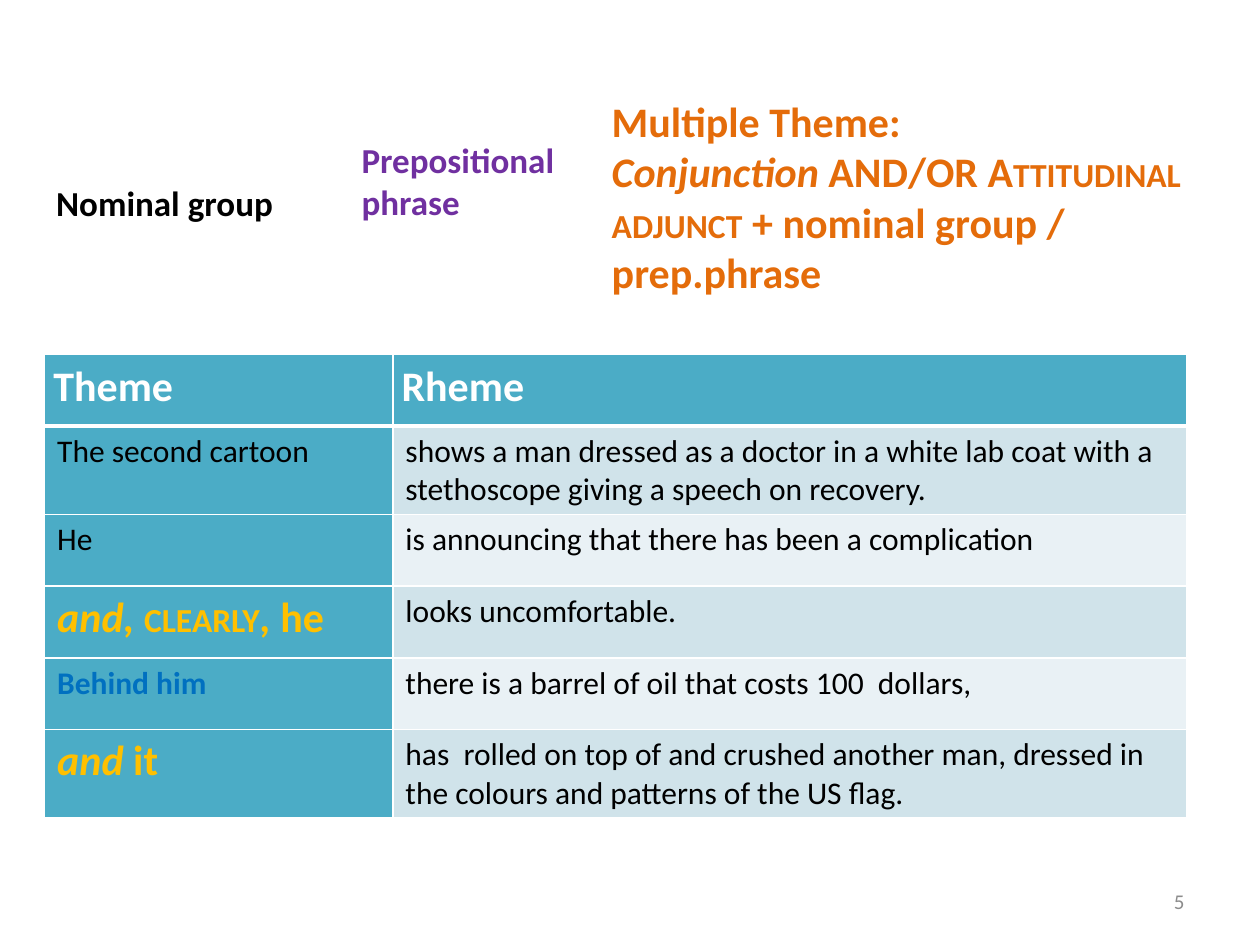
from dataclasses import dataclass

from lxml import etree
from pptx import Presentation
from pptx.dml.color import RGBColor
from pptx.enum.text import MSO_ANCHOR, MSO_AUTO_SIZE, PP_ALIGN
from pptx.oxml.ns import qn
from pptx.util import Pt

TOP, MIDDLE = MSO_ANCHOR.TOP, MSO_ANCHOR.MIDDLE
LEFT, RIGHT, JUSTIFY = PP_ALIGN.LEFT, PP_ALIGN.RIGHT, PP_ALIGN.JUSTIFY
GROW = MSO_AUTO_SIZE.SHAPE_TO_FIT_TEXT


@dataclass(frozen=True)
class Theme:
    font: str = "Calibri"
    black: str = "000000"
    white: str = "FFFFFF"
    purple: str = "7030A0"
    orange: str = "E46C0A"
    gold: str = "FFC000"
    blue: str = "0070C0"
    grey: str = "8C8C8C"
    teal: str = "4BACC6"
    bands: tuple = ("D0E3EA", "E9F1F5")
    large: int = 24
    label: int = 20
    body: int = 18
    small: int = 12


THEME = Theme()
ITALIC = {"italic": True}
SMALL_CAPS = {"caps": "small"}
BODY = {"size": THEME.body, "color": THEME.black}
HEADER = {"size": THEME.large, "color": THEME.white, "bold": True}
MULTIPLE = {"size": THEME.large, "color": THEME.gold, "bold": True}
PREPOSITIONAL = {"size": THEME.body, "color": THEME.blue, "bold": True}

# Each label: box, format, paragraphs made of (text, extra format) runs
LABELS = [
    ((25, 100, 148, 32), {"size": THEME.label, "color": THEME.black, "bold": True},
     [[("Nominal group", {})]]),
    ((199.5, 75.5, 153.5, 55.5), {"size": THEME.label, "color": THEME.purple, "bold": True},
     [[("Prepositional phrase", {})]]),
    ((342.5, 51, 346, 124), {"size": THEME.large, "color": THEME.orange, "bold": True},
     [[("Multiple Theme:", {})],
      [("Conjunction", ITALIC), (" AND/OR ", {}), ("Attitudinal adjunct", SMALL_CAPS),
       (" + nominal group / prep.phrase", {})]]),
]

# Each clause: theme runs, theme format, rheme
CLAUSES = [
    ([("The second cartoon", {})], BODY,
     "shows a man dressed as a doctor in a white lab coat with a stethoscope "
     "giving a speech on recovery."),
    ([("He", {})], BODY, "is announcing that there has been a complication"),
    ([("and, ", ITALIC), ("clearly", SMALL_CAPS), (",", ITALIC), (" he", {})], MULTIPLE,
     "looks uncomfortable."),
    ([("Behind him", {})], PREPOSITIONAL,
     "there is a barrel of oil that costs 100  dollars,"),
    ([("and", ITALIC), (" it", {})], MULTIPLE,
     "has  rolled on top of and crushed another man, dressed in the colours "
     "and patterns of the US flag."),
]


def add_runs(paragraph, runs, base, alignment=LEFT):
    paragraph.alignment = alignment
    for text, extra in runs:
        run = paragraph.add_run()
        run.text = text
        style = {"bold": False, "italic": False, **base, **extra}
        run.font.color.rgb = RGBColor.from_string(style["color"])
        values = {"name": THEME.font, "size": Pt(style["size"]),
                  "bold": style["bold"], "italic": style["italic"]}
        for name, value in values.items():
            setattr(run.font, name, value)
        if "caps" in style:
            run._r.get_or_add_rPr().set("cap", style["caps"])


def add_text(slide, box, style, paragraphs, alignment=LEFT, anchor=TOP, auto_size=GROW):
    frame = slide.shapes.add_textbox(*map(Pt, box)).text_frame
    values = {"word_wrap": True, "auto_size": auto_size, "vertical_anchor": anchor}
    for name, value in values.items():
        setattr(frame, name, value)
    for index, runs in enumerate(paragraphs):
        paragraph = frame.add_paragraph() if index else frame.paragraphs[0]
        add_runs(paragraph, runs, style, alignment)


def set_borders(cell, top=1, bottom=1):
    properties = cell._tc.get_or_add_tcPr()
    for side, width in (("L", 1), ("R", 1), ("T", top), ("B", bottom)):
        line = etree.SubElement(properties, qn(f"a:ln{side}"), w=str(Pt(width)))
        fill = etree.SubElement(line, qn("a:solidFill"))
        etree.SubElement(fill, qn("a:srgbClr"), val=THEME.white)


def fill_cell(cell, color):
    cell.fill.solid()
    cell.fill.fore_color.rgb = RGBColor.from_string(color)


def add_header_cell(cell, text):
    set_borders(cell, bottom=3)
    fill_cell(cell, THEME.teal)
    margins = {"margin_left": 5, "margin_right": 5, "margin_top": 0, "margin_bottom": 0}
    for name, value in margins.items():
        setattr(cell, name, Pt(value))
    paragraph = cell.text_frame.paragraphs[0]
    paragraph.line_spacing = 1.15
    add_runs(paragraph, [(text, {})], HEADER, JUSTIFY)


def add_clause_table(slide, box, theme_width, row_height):
    left, top, width, height = box
    table = slide.shapes.add_table(len(CLAUSES) + 1, 2, *map(Pt, box)).table
    table.first_row = table.horz_banding = False
    for column, column_width in zip(table.columns, (theme_width, width - theme_width)):
        column.width = Pt(column_width)
    for row in table.rows:
        row.height = Pt(row_height)
    for column, text in enumerate(("Theme", "Rheme")):
        add_header_cell(table.cell(0, column), text)
    for index, (theme_runs, style, rheme) in enumerate(CLAUSES):
        band = THEME.bands[index % 2]
        parts = ((theme_runs, style, THEME.teal), ([(rheme, {})], BODY, band))
        for column, (runs, base, color) in enumerate(parts):
            cell = table.cell(index + 1, column)
            set_borders(cell, top=1 if index else 3)
            fill_cell(cell, color)
            add_runs(cell.text_frame.paragraphs[0], runs, base)


def main():
    presentation = Presentation()
    presentation.slide_width, presentation.slide_height = Pt(720), Pt(540)
    slide = presentation.slides.add_slide(presentation.slide_layouts[6])
    for box, style, paragraphs in LABELS:
        add_text(slide, box, style, paragraphs)
    add_clause_table(slide, (25.5, 202.5, 652.5, 264), theme_width=199, row_height=41)
    add_text(slide, (516, 500.5, 168, 28.5), {"size": THEME.small, "color": THEME.grey},
             [[("5", {})]], RIGHT, MIDDLE, MSO_AUTO_SIZE.NONE)
    presentation.save("out.pptx")


if __name__ == "__main__":
    main()
